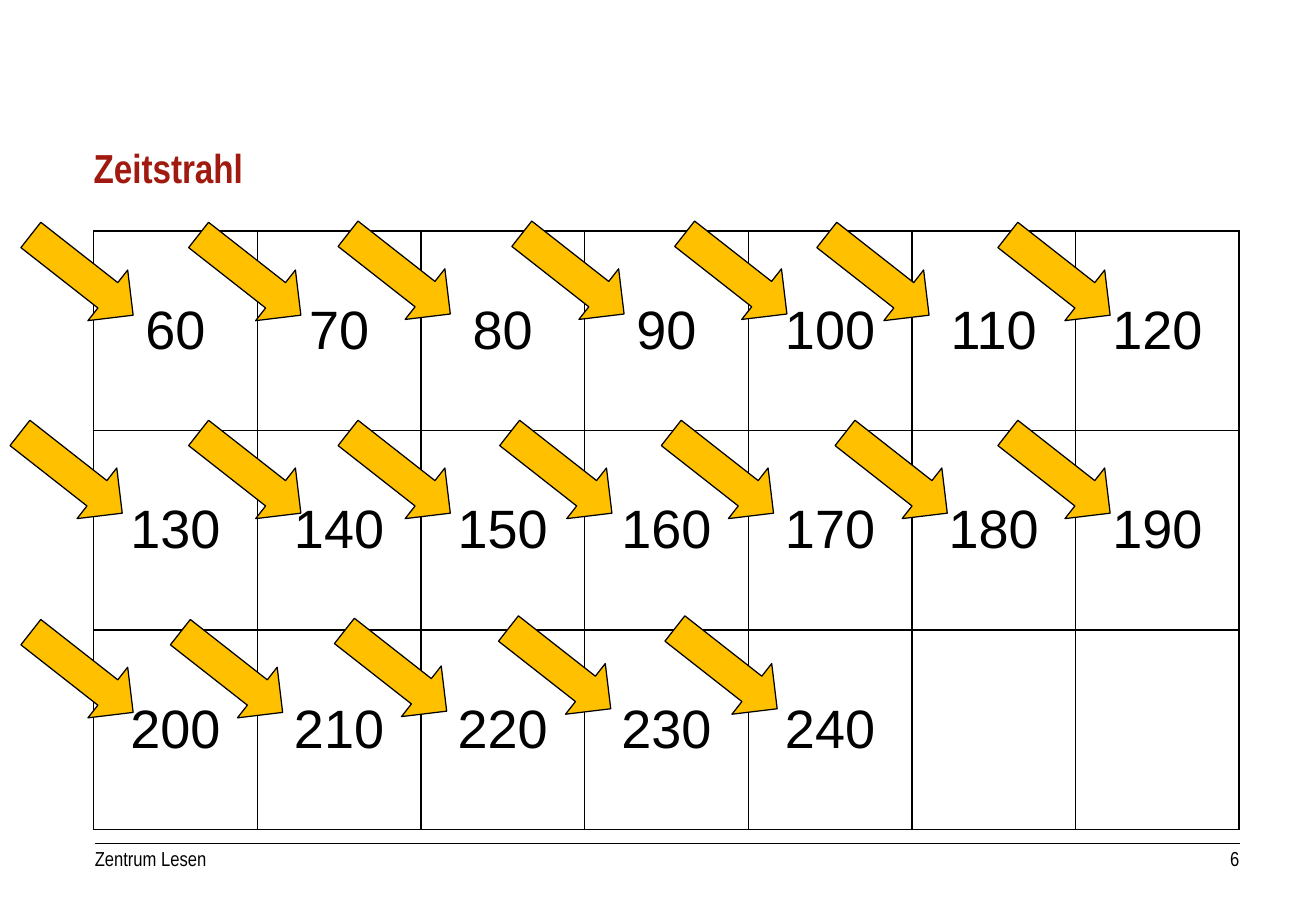
from lxml import etree
from pptx import Presentation
from pptx.dml.color import RGBColor
from pptx.enum import dml, shapes, text
from pptx.oxml import ns
from pptx.util import Inches, Pt

BLACK = RGBColor(0x00, 0x00, 0x00)
RED = RGBColor(0xA0, 0x1A, 0x10)
GOLD = RGBColor(0xFF, 0xC0, 0x00)
NARROW = "Arial Narrow"
ROWS, COLS = 3, 7
FIRST, LAST, STEP = 60, 240, 10
SHIFTS = [
    [-0.63, 0.75, 1.98, 3.41, 4.75, 5.92, 7.41],
    [-0.72, 0.75, 1.98, 3.31, 4.64, 6.07, 7.41],
    [-0.63, 0.6, 1.95, 3.3, 4.67],
]
DROPS = [
    [0.1, 0.1, 0.09, 0.09, 0.09, 0.1, 0.1],
    [1.73] * 7,
    [3.37, 3.37, 3.36, 3.34, 3.34],
]


def write(frame, words, size=12, font=NARROW, color=BLACK, bold=False,
          align=text.PP_ALIGN.LEFT, anchor=text.MSO_ANCHOR.MIDDLE,
          pads=(0, 0), lead=None):
    """Put formatted words into a text frame."""
    frame.word_wrap = True
    frame.auto_size = text.MSO_AUTO_SIZE.NONE
    frame.vertical_anchor = anchor
    frame.margin_left = frame.margin_right = Inches(pads[0])
    frame.margin_top = frame.margin_bottom = Inches(pads[1])
    para = frame.paragraphs[0]
    para.alignment = align
    para.line_spacing = lead
    run = para.add_run()
    run.text = words
    run.font.size = Pt(size)
    run.font.name = font
    run.font.bold = bold
    run.font.color.rgb = color


def head(slide, x, y, w, h):
    """Place the slide title."""
    title = slide.shapes.title
    title.left, title.top = Inches(x), Inches(y)
    title.width, title.height = Inches(w), Inches(h)
    write(title.text_frame, "Zeitstrahl", size=24, color=RED, bold=True,
          anchor=text.MSO_ANCHOR.TOP, pads=(0.1, 0.05), lead=0.9)


def edge(cell):
    """Draw thin black borders around a cell."""
    props = cell._tc.get_or_add_tcPr()
    for spot, side in enumerate(("lnL", "lnR", "lnT", "lnB")):
        line = etree.Element(ns.qn("a:" + side), w=str(Pt(1)))
        fill = etree.SubElement(line, ns.qn("a:solidFill"))
        etree.SubElement(fill, ns.qn("a:srgbClr"), val=str(BLACK))
        props.insert(spot, line)


def grid(slide, x, y, w, h):
    """Fill the table with the numbers in steps of ten."""
    table = slide.shapes.add_table(
        ROWS, COLS, Inches(x), Inches(y), Inches(w), Inches(h)).table
    table.first_row = table.horz_banding = False
    for place, cell in enumerate(table.iter_cells()):
        cell.fill.background()
        edge(cell)
        cell.vertical_anchor = text.MSO_ANCHOR.MIDDLE
        value = FIRST + place * STEP
        if value <= LAST:
            para = cell.text_frame.paragraphs[0]
            para.alignment = text.PP_ALIGN.CENTER
            run = para.add_run()
            run.text = str(value)
            run.font.size = Pt(32)
            run.font.name = "Arial"
            run.font.color.rgb = BLACK


def arrows(slide, x, y):
    """Place the slanted arrows over the table corner at x, y."""
    for shifts, drops in zip(SHIFTS, DROPS):
        for shift, drop in zip(shifts, drops):
            arrow = slide.shapes.add_shape(
                shapes.MSO_SHAPE.RIGHT_ARROW, Inches(x + shift),
                Inches(y + drop), Inches(1.07), Inches(0.53))
            arrow.rotation = 38.1
            arrow.shadow.inherit = False
            arrow.fill.solid()
            arrow.fill.fore_color.rgb = GOLD
            arrow.line.color.rgb = BLACK
            arrow.line.width = Pt(0.75)


def foot(slide, x, y, w):
    """Place the dotted rule, footer words and page number."""
    rule = slide.shapes.add_connector(
        shapes.MSO_CONNECTOR.STRAIGHT,
        Inches(x), Inches(y), Inches(x + w), Inches(y))
    rule.line.color.rgb = BLACK
    rule.line.width = Pt(0.25)
    rule.line.dash_style = dml.MSO_LINE.ROUND_DOT
    etree.SubElement(rule._element.spPr, ns.qn("a:effectLst"))
    top, tall, num = Inches(y + 0.03), Inches(0.2), 0.94
    left = slide.shapes.add_textbox(Inches(x), top, Inches(8.19), tall)
    write(left.text_frame, "Zentrum Lesen", anchor=text.MSO_ANCHOR.BOTTOM)
    right = slide.shapes.add_textbox(
        Inches(x + w - num), top, Inches(num), tall)
    write(right.text_frame, "6", align=text.PP_ALIGN.RIGHT)


def main():
    """Build and save the slide."""
    deck = Presentation()
    deck.slide_width, deck.slide_height = Inches(10.83), Inches(7.5)
    slide = deck.slides.add_slide(deck.slide_layouts[5])
    head(slide, 0.67, 1.17, 9.58, 0.94)
    grid(slide, 0.77, 1.9, 9.43, 4.93)
    foot(slide, 0.78, 6.94, 9.42)
    arrows(slide, 0.77, 1.9)
    deck.save("out.pptx")


if __name__ == "__main__":
    main()
